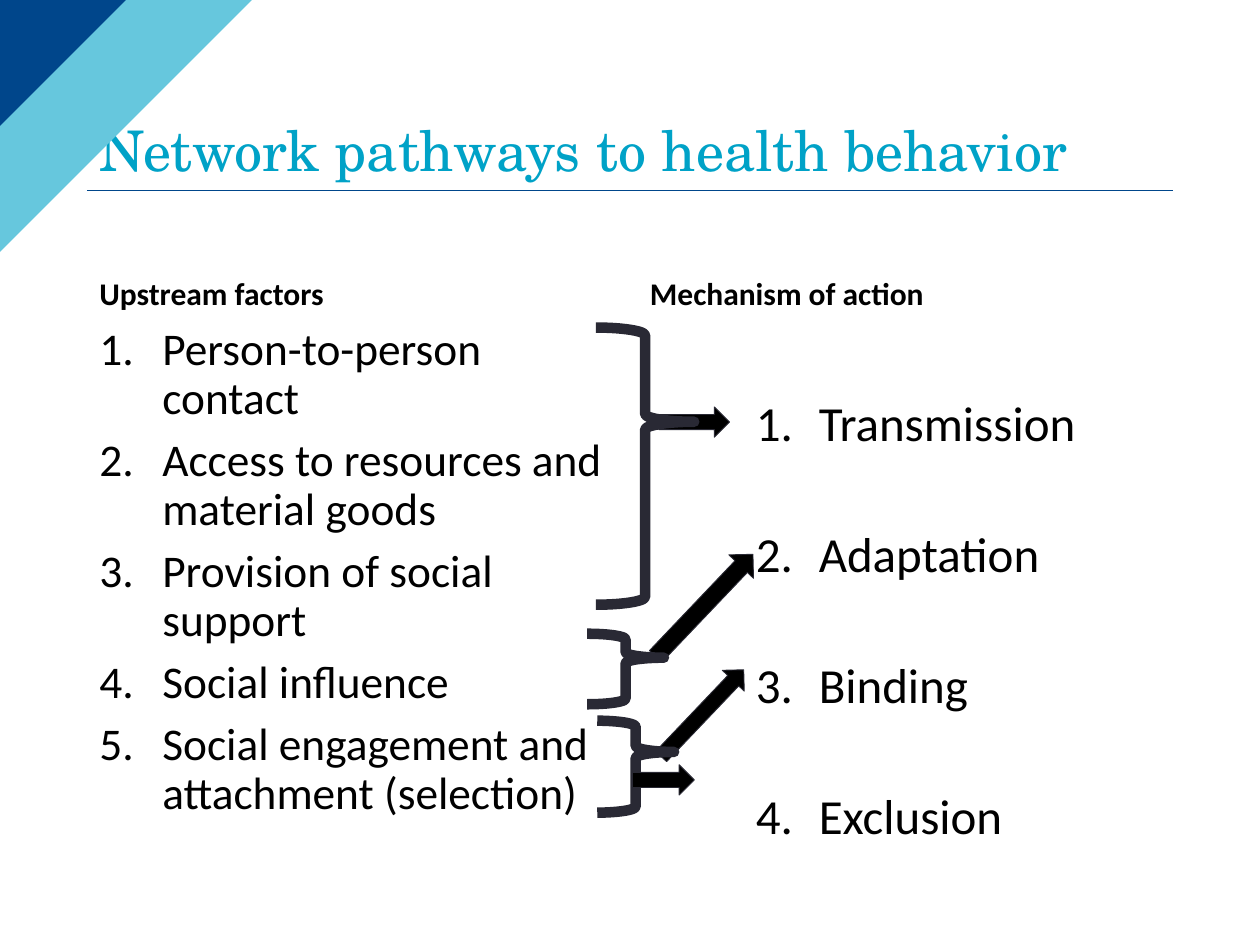
from lxml import etree
from pptx import Presentation
from pptx import util as u
from pptx.dml import color
from pptx.enum import shapes, text
from pptx.oxml import ns

In = u.Inches
RGB = color.RGBColor.from_string
THEME = {
    "cyan": RGB("00A2C7"), "pale": RGB("66C7DD"), "navy": RGB("00468B"),
    "ink": RGB("000000"), "brace": RGB("292934"),
    "serif": "TeX Gyre Schola", "sans": "Calibri",
    "title": 32, "heading": 18, "factors": 25.9, "mechanisms": 28,
}

prs = Presentation()
prs.slide_width, prs.slide_height = In(10), In(7.5)
s = prs.slides.add_slide(prs.slide_layouts[5])


def write(sp, lines, size, spacing, anchor, numbered=False, bold=False,
          face=THEME["sans"], ink=THEME["ink"]):
    tf = sp.text_frame
    frame = {"word_wrap": True, "auto_size": text.MSO_AUTO_SIZE.NONE, "vertical_anchor": anchor}
    for name, value in frame.items():
        setattr(tf, name, value)
    for i, line in enumerate(lines):
        p = tf.paragraphs[0] if i == 0 else tf.add_paragraph()
        p.alignment = text.PP_ALIGN.LEFT
        p.line_spacing = spacing
        p.space_before = u.Pt(7.5 if i else 0)
        if numbered:
            pPr = p._p.get_or_add_pPr()
            pPr.set("marL", str(In(0.5)))
            pPr.set("indent", str(In(-0.5)))
            etree.SubElement(pPr, ns.qn("a:buFont"), typeface="+mj-lt")
            etree.SubElement(pPr, ns.qn("a:buAutoNum"), type="arabicPeriod")
        r = p.add_run()
        r.text = line
        for name, value in {"size": u.Pt(size), "bold": bold, "name": face}.items():
            setattr(r.font, name, value)
        r.font.color.rgb = ink


rule = s.shapes.add_connector(shapes.MSO_CONNECTOR.STRAIGHT, In(0.69), In(1.51), In(9.31), In(1.51))
rule.line.color.rgb = THEME["navy"]
rule.line.width = u.Pt(0.75)
etree.SubElement(rule._element.spPr, ns.qn("a:effectLst"))

for width, height, fill in ((1.62, 1.64, "pale"), (1.37, 1.39, "navy")):
    fb = s.shapes.build_freeform(0, 0, scale=In(1))
    fb.add_line_segments([(width, 0), (0, height)], close=True)
    corner = fb.convert_to_shape()
    corner.shadow.inherit = False
    corner.fill.solid()
    corner.fill.fore_color.rgb = THEME[fill]
    corner.line.fill.background()

title = s.shapes.title
for name, value in {"left": 0.69, "top": 0.4, "width": 8.62, "height": 1.11}.items():
    setattr(title, name, In(value))
TOP, BOTTOM = text.MSO_ANCHOR.TOP, text.MSO_ANCHOR.BOTTOM
write(title, ["Network pathways to health behavior"], THEME["title"], 0.9, BOTTOM,
      face=THEME["serif"], ink=THEME["cyan"])

factors = ["Person-to-person contact", "Access to resources and material goods",
           "Provision of social support", "Social influence",
           "Social engagement and attachment (selection)"]
mechanisms = ["Transmission", "Adaptation", "Binding", "Exclusion"]
heading = {"size": THEME["heading"], "spacing": 0.9, "anchor": BOTTOM, "bold": True}
numbers = {"anchor": TOP, "numbered": True}
for box, lines, style in (
    ((0.69, 1.63, 4.23, 0.9), ["Upstream factors"], heading),
    ((0.69, 2.54, 4.23, 4.26), factors, {**numbers, "size": THEME["factors"], "spacing": 0.9}),
    ((5.06, 1.63, 4.25, 0.9), ["Mechanism of action"], heading),
    ((5.9, 2.6, 4.3, 4.32), mechanisms, {**numbers, "size": THEME["mechanisms"], "spacing": 2.0}),
):
    write(s.shapes.add_textbox(*map(In, box)), lines, **style)

ARROW, BRACE = shapes.MSO_SHAPE.RIGHT_ARROW, shapes.MSO_SHAPE.RIGHT_BRACE
for kind, box, angle in (
    (ARROW, (5.23, 3.23, 0.56, 0.24), 0),
    (BRACE, (4.73, 2.6, 0.78, 2.2), 0),
    (ARROW, (5.03, 4.67, 1.12, 0.27), 313.6),
    (BRACE, (4.66, 5.03, 0.61, 0.56), 0),
    (ARROW, (5.1, 5.54, 0.95, 0.24), 313.6),
    (BRACE, (4.74, 5.72, 0.61, 0.73), 0),
    (ARROW, (5.02, 6.07, 0.49, 0.24), 0),
):
    sp = s.shapes.add_shape(kind, *map(In, box))
    sp.shadow.inherit = False
    sp.rotation = angle
    sp.line.color.rgb = THEME["brace"]
    if kind == ARROW:
        sp.fill.solid()
        sp.fill.fore_color.rgb = THEME["ink"]
        sp.line.width = u.Pt(0.5)
    else:
        sp.fill.background()
        sp.line.width = u.Pt(6)
        sp.adjustments[0], sp.adjustments[1] = 0.08, 0.34

prs.save("out.pptx")
